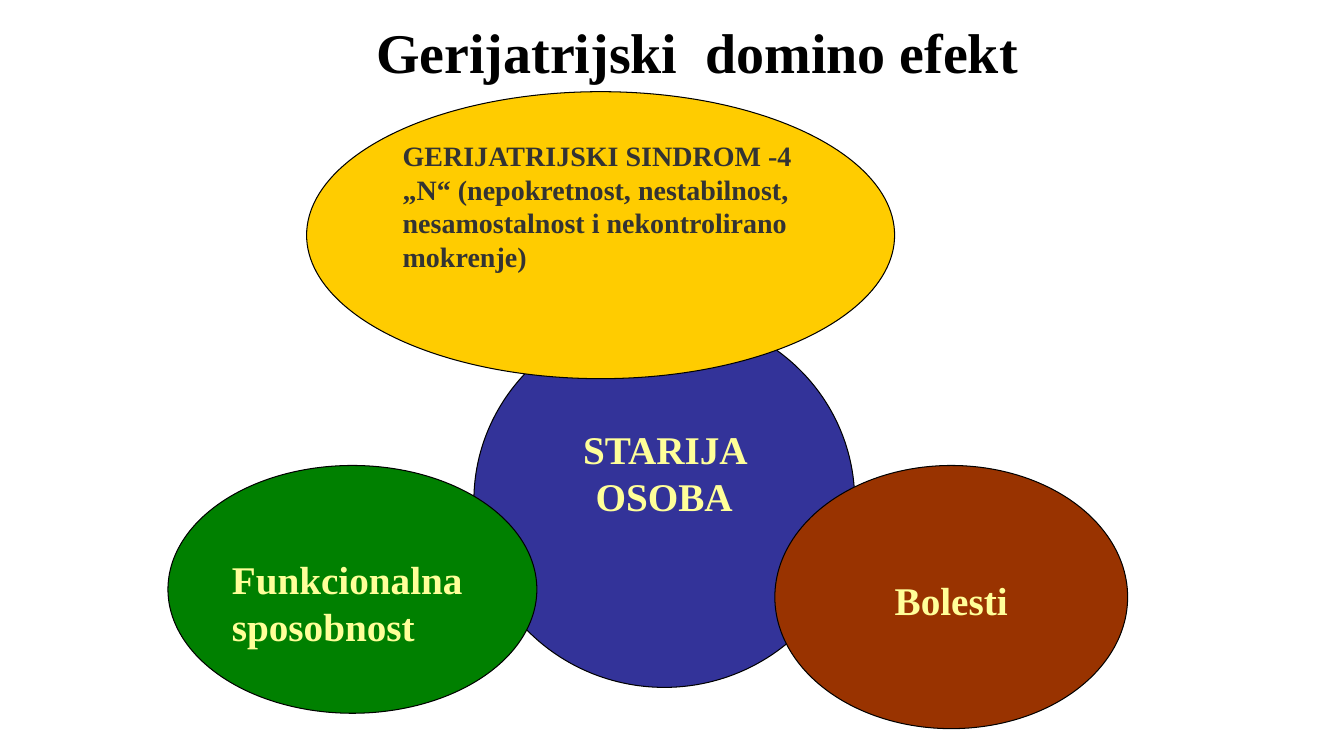
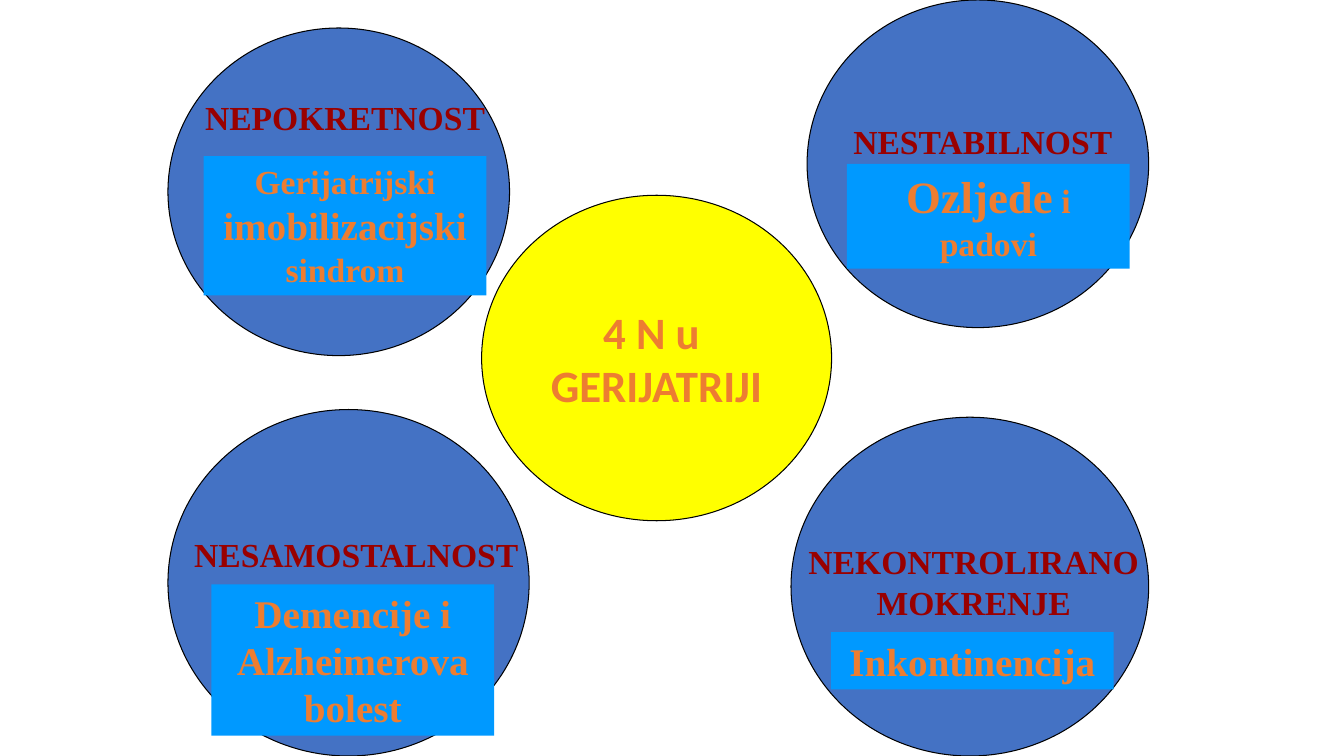
from dataclasses import dataclass

from pptx import Presentation
from pptx.dml.color import RGBColor
from pptx.enum.shapes import MSO_SHAPE
from pptx.enum.text import MSO_ANCHOR, PP_ALIGN
from pptx.util import Pt

OVAL, RECT = MSO_SHAPE.OVAL, MSO_SHAPE.RECTANGLE
LEFT, MID = PP_ALIGN.LEFT, PP_ALIGN.CENTER
TOP, HALF = MSO_ANCHOR.TOP, MSO_ANCHOR.MIDDLE


@dataclass(frozen=True)
class Theme:
    """Colours, fonts and type sizes of the deck."""
    serif: str = "Times New Roman"
    sans: str = "Calibri"
    black: str = "000000"
    navy: str = "333399"
    gold: str = "FFCC00"
    green: str = "008000"
    rust: str = "993300"
    cream: str = "FFFF99"
    dark: str = "333333"
    yellow: str = "FFFF00"
    blue: str = "4472C4"
    sky: str = "0099FF"
    orange: str = "ED7D31"
    red: str = "990000"
    title: int = 40
    hub: int = 32
    large: int = 28
    label: int = 24
    body: int = 20


T = Theme()


def write(shape, paras, size, color, align=MID, font=T.serif, top=3.6, anchor=TOP, wrap=True):
    """Fill a shape with paragraphs, each a string or a list of sized runs."""
    frame = shape.text_frame
    frame.word_wrap = wrap
    frame.vertical_anchor = anchor
    frame.margin_top = Pt(top)
    for i, runs in enumerate(paras):
        para = frame.add_paragraph() if i else frame.paragraphs[0]
        para.alignment = align
        para.font.name, para.font.bold = font, True
        para.font.size = Pt(size)
        para.font.color.rgb = RGBColor.from_string(color)
        for text, own in [(runs, size)] if isinstance(runs, str) else runs:
            run = para.add_run()
            run.text = text
            if own != size:
                run.font.size = Pt(own)


def draw(slide, kind, box, fill, line=None):
    """Add a filled shape, outlined only when a line colour is given."""
    shape = slide.shapes.add_shape(kind, *map(Pt, box))
    shape.shadow.inherit = False
    shape.fill.solid()
    shape.fill.fore_color.rgb = RGBColor.from_string(fill)
    if line:
        shape.line.color.rgb = RGBColor.from_string(line)
        shape.line.width = Pt(0.75)
    else:
        shape.line.fill.background()
    return shape


def note(slide, box, text, size, color):
    """Add a centred text box."""
    write(slide.shapes.add_textbox(*map(Pt, box)), [text], size, color)


def node(slide, box, label, tag):
    """Add a circle with a heading and a badge placed from its corner."""
    x, y, w, h = box
    draw(slide, OVAL, box, T.blue, T.black)
    text, mid, drop, high = label
    wide = 270
    note(slide, (x + mid - wide / 2, y + drop, wide, high), text, T.label, T.red)
    runs, size, dx, dy, tall = tag
    badge = draw(slide, RECT, (x + dx, y + dy, 202, tall), T.sky)
    write(badge, [runs], size, T.orange)


def domino(slide):
    """Build the slide of overlapping ellipses."""
    note(slide, (156, 9, 684, 54), "Gerijatrijski  domino efekt", T.title, T.black)
    ovals = [
        ((338.5, 224.5, 272, 266.5), T.navy, "STARIJA OSOBA", T.large, T.cream, MID, 40.5),
        ((219, 65.5, 420, 205), T.gold,
         "GERIJATRIJSKI SINDROM -4 „N“ (nepokretnost, nestabilnost, "
         "nesamostalnost i nekontrolirano mokrenje)", T.body, T.dark, LEFT, 3.6),
        ((120, 332.5, 263.5, 177), T.green, "Funkcionalna sposobnost", T.large, T.cream, LEFT, 38),
        ((553.5, 332.5, 252, 188), T.rust, "Bolesti", T.large, T.cream, MID, 52),
    ]
    for box, fill, text, size, color, align, top in ovals:
        shape = draw(slide, OVAL, box, fill, T.black)
        write(shape, [text], size, color, align, top=top)


def circles(slide):
    """Build the slide of four circles around a hub."""
    hub = draw(slide, OVAL, (344, 139.5, 250, 232.5), T.yellow, T.black)
    write(hub, ["4 N u ", "GERIJATRIJI"], T.hub, T.orange, font=T.sans, anchor=HALF, wrap=False)
    nodes = [
        ((120, 20, 244, 234), ("NEPOKRETNOST", 126.5, 45.5, 36),
         ([("Gerijatrijski ", T.label), ("imobilizacijski", T.large), (" sindrom", T.label)],
          T.label, 25.5, 91.5, 99.5)),
        ((576.5, 0, 244, 234), ("NESTABILNOST", 125.5, 83, 36),
         ([("Ozljede", T.hub), (" i padovi", T.label)], T.label, 28.5, 117, 75)),
        ((120, 292.5, 258, 247.5), ("NESAMOSTALNOST", 134.5, 85.5, 36),
         ("Demencije i Alzheimerova bolest", T.large, 31, 125, 108)),
        ((565, 298, 255.5, 242), ("NEKONTROLIRANO MOKRENJE", 130.5, 85, 65.5),
         ("Inkontinencija", T.large, 28.5, 153.5, 41)),
    ]
    for box, label, tag in nodes:
        node(slide, box, label, tag)


def main():
    """Build and save the deck."""
    deck = Presentation()
    deck.slide_width, deck.slide_height = Pt(960), Pt(540)
    for build in (domino, circles):
        build(deck.slides.add_slide(deck.slide_layouts[6]))
    deck.save("out.pptx")


if __name__ == "__main__":
    main()
